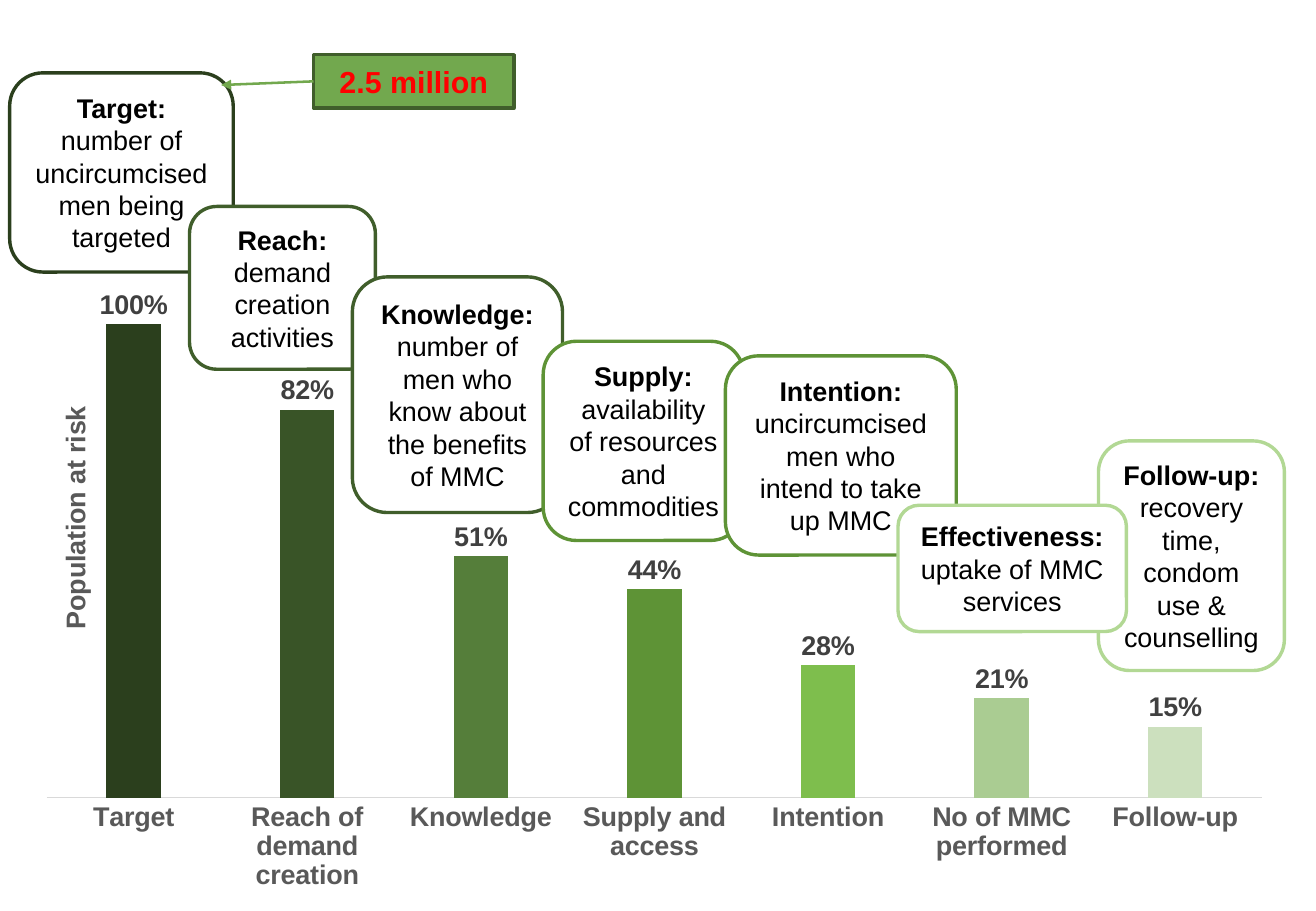
import pptx
import pptx.chart.data
import pptx.dml.color
import pptx.enum.chart
import pptx.enum.shapes
import pptx.enum.text
import pptx.oxml
import pptx.oxml.ns
import pptx.util

Inches = pptx.util.Inches
Pt = pptx.util.Pt
qn = pptx.oxml.ns.qn
SHAPE = pptx.enum.shapes.MSO_SHAPE

BARS = [
    ("Target", 1, "2B3F1D"),
    ("Reach of demand creation", 0.82, "395427"),
    ("Knowledge", 0.51, "557E3A"),
    ("Supply and access", 0.44, "5E9336"),
    ("Intention", 0.28, "7EBE4D"),
    ("No of MMC performed", 0.21, "AACC92"),
    ("Follow-up", 0.15, "CCE0BE"),
]

NOTES = [
    ("Target: ", "number of uncircumcised men being targeted", "2B3F1D", (0.08, 0.6, 1.84, 1.64)),
    ("Reach: ", "demand creation activities", "405E2B", (1.56, 1.7, 1.53, 1.34)),
    ("Follow-up: ", "recovery time, condom use & counselling", "B2D894", (9.04, 3.63, 1.53, 1.89)),
    ("Knowledge: ", "number of men who know about the benefits of MMC", "405E2B", (2.9, 2.28, 1.73, 1.94)),
    ("Supply: ", "availability of resources and commodities", "5E9336", (4.47, 2.81, 1.65, 1.64)),
    ("Intention: ", "uncircumcised men who intend to take up MMC", "5E9336", (5.97, 2.93, 1.9, 1.64)),
    ("Effectiveness: ", "uptake of MMC services", "B2D894", (7.39, 4.16, 1.88, 1.04)),
]


def color(code):
    return pptx.dml.color.RGBColor.from_string(code)


def style(font, size=16, tint="000000", bold=False):
    font.name = "Arial"
    font.size = Pt(size)
    font.bold = bold
    font.color.rgb = color(tint)


def write(para, text, **form):
    run = para.add_run()
    run.text = text
    style(run.font, **form)


def place(parent, index, inner=False, **parts):
    for old in parent.findall(qn("c:layout")):
        parent.remove(old)
    fields = '<c:layoutTarget val="inner"/>' if inner else ""
    fields += "".join(f'<c:{side}Mode val="edge"/>' for side in "xy")
    fields += "".join(f'<c:{key} val="{val}"/>' for key, val in parts.items())
    space = pptx.oxml.ns.nsdecls("c")
    parent.insert(index, pptx.oxml.parse_xml(
        f"<c:layout {space}><c:manualLayout>{fields}</c:manualLayout></c:layout>"))


def add_bars(slide, box):
    data = pptx.chart.data.CategoryChartData(number_format="0%")
    data.categories = [name for name, _, _ in BARS]
    data.add_series("Series 1", [value for _, value, _ in BARS])
    kind = pptx.enum.chart.XL_CHART_TYPE.COLUMN_CLUSTERED
    chart = slide.shapes.add_chart(kind, *map(Inches, box), data).chart
    style(chart.font)
    chart.has_legend = False
    chart.has_title = False
    place(chart._chartSpace.chart.plotArea, 0, inner=True, x=0.035, y=0.038, w=0.957, h=0.768)

    plot = chart.plots[0]
    plot.gap_width = 219
    plot.overlap = -27
    plot.vary_by_categories = False
    plot.has_data_labels = True
    labels = plot.data_labels
    labels.show_value = True
    labels.number_format = "0%"
    labels.number_format_is_linked = False
    labels.position = pptx.enum.chart.XL_LABEL_POSITION.OUTSIDE_END
    style(labels.font, tint="404040", bold=True)
    for index, (_, _, tint) in enumerate(BARS):
        fill = plot.series[0].points[index].format.fill
        fill.solid()
        fill.fore_color.rgb = color(tint)

    base = chart.category_axis
    base.major_tick_mark = pptx.enum.chart.XL_TICK_MARK.NONE
    base.format.line.color.rgb = color("D9D9D9")
    base.format.line.width = Pt(0.75)
    style(base.tick_labels.font, tint="595959", bold=True)

    scale = chart.value_axis
    scale.minimum_scale = 0
    scale.maximum_scale = 1.2
    scale.major_unit = 0.2
    scale.has_major_gridlines = False
    scale.visible = False
    title = scale.axis_title
    write(title.text_frame.paragraphs[0], "Population at risk", tint="595959", bold=True)
    title._element.find(".//" + qn("a:bodyPr")).set("rot", "-5400000")
    place(title._element, 1, x=0.04, y=0.27)


def add_box(slide, box, kind, fill, edge):
    shape = slide.shapes.add_shape(kind, *map(Inches, box))
    shape.shadow.inherit = False
    shape.fill.solid()
    shape.fill.fore_color.rgb = color(fill)
    shape.line.color.rgb = color(edge)
    shape.line.width = Pt(2)
    frame = shape.text_frame
    frame.word_wrap = True
    frame.auto_size = pptx.enum.text.MSO_AUTO_SIZE.SHAPE_TO_FIT_TEXT
    frame.vertical_anchor = pptx.enum.text.MSO_ANCHOR.MIDDLE
    frame.margin_left = frame.margin_right = Inches(0.12)
    frame.margin_top = frame.margin_bottom = Inches(0.07)
    para = frame.paragraphs[0]
    para.alignment = pptx.enum.text.PP_ALIGN.CENTER
    return para


def add_note(slide, box, head, body, edge):
    para = add_box(slide, box, SHAPE.ROUNDED_RECTANGLE, "FFFFFF", edge)
    write(para, head, bold=True)
    write(para, body)


def add_total(slide, box):
    para = add_box(slide, box, SHAPE.RECTANGLE, "72A84E", "405E2B")
    write(para, "2.5 million", size=18, tint="FF0000", bold=True)
    left, top, _, high = box
    mid = top + high / 2
    ends = map(Inches, (left, mid, left - 0.76, mid + 0.03))
    arrow = slide.shapes.add_connector(pptx.enum.shapes.MSO_CONNECTOR.STRAIGHT, *ends)
    arrow.line.color.rgb = color("72A84E")
    arrow.line.width = Pt(1.5)
    space = pptx.oxml.ns.nsdecls("a")
    arrow.line._get_or_add_ln().append(
        pptx.oxml.parse_xml(f'<a:tailEnd {space} type="triangle"/>'))
    arrow._element.spPr.append(pptx.oxml.parse_xml(f"<a:effectLst {space}/>"))


def main():
    deck = pptx.Presentation()
    deck.slide_width = Inches(10.83)
    deck.slide_height = Inches(7.5)
    slide = deck.slides.add_slide(deck.slide_layouts[6])
    add_bars(slide, (0.02, 1.66, 10.45, 6.09))
    for head, body, edge, box in NOTES:
        add_note(slide, box, head, body, edge)
    add_total(slide, (2.58, 0.45, 1.65, 0.44))
    deck.save("out.pptx")


if __name__ == "__main__":
    main()
